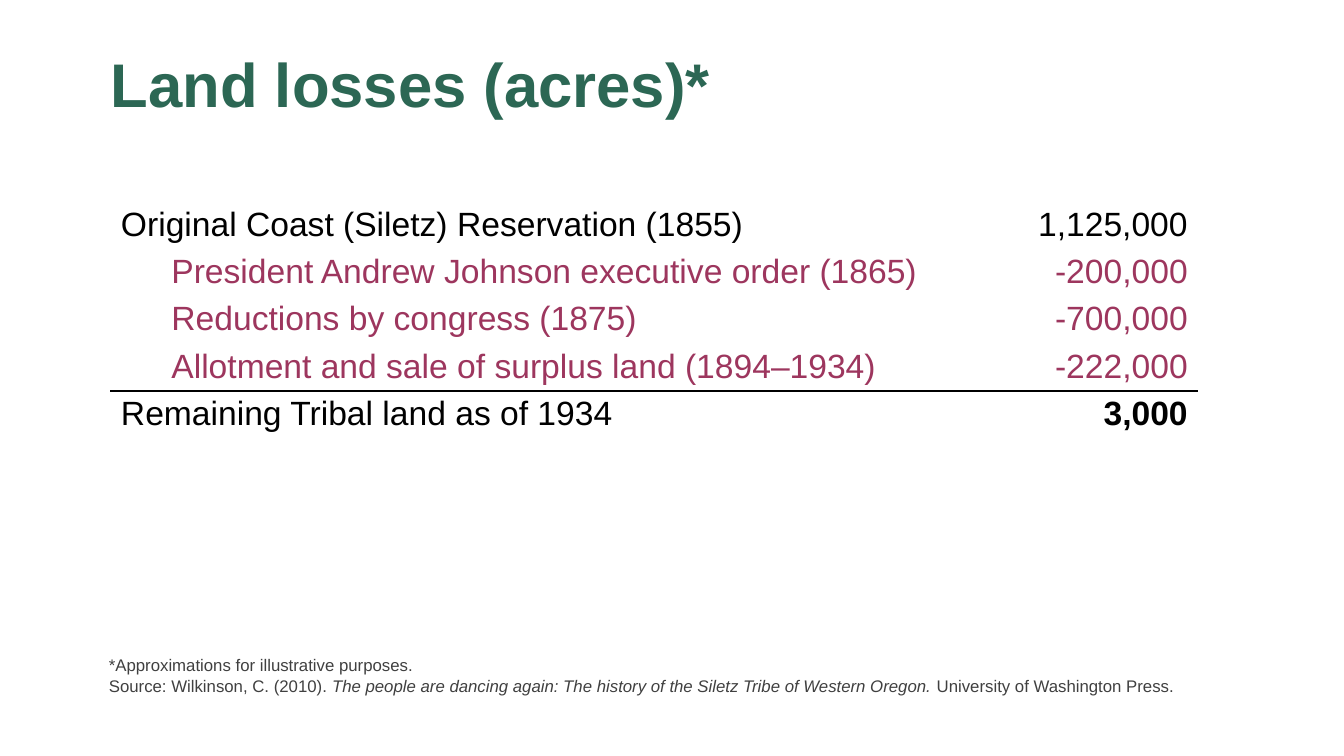
from lxml import etree
from pptx import Presentation
from pptx import util as u
from pptx.dml.color import RGBColor
from pptx.enum import text
from pptx.oxml.ns import qn

FONT = "Arial"
GREEN, ROSE, BLACK, GREY, WHITE = "2C6754", "9D365E", "000000", "404040", "FFFFFF"
TITLE = "Land losses (acres)*"
ACRES = [
    ("Original Coast (Siletz) Reservation (1855)", "1,125,000", BLACK),
    ("President Andrew Johnson executive order (1865)", "-200,000", ROSE),
    ("Reductions by congress (1875)", "-700,000", ROSE),
    ("Allotment and sale of surplus land (1894–1934)", "-222,000", ROSE),
    ("Remaining Tribal land as of 1934", "3,000", BLACK),
]
NOTES = [
    [("*Approximations for illustrative purposes.", False)],
    [
        ("Source: Wilkinson, C. (2010). ", False),
        ("The people are dancing again: The history of the Siletz Tribe of Western Oregon.\u00a0", True),
        ("University of Washington Press.", False),
    ],
]
LEFT, COLUMNS, ROW = 1.1, (8.27, 2.51), 0.47
WIDTH = sum(COLUMNS)
TOTAL = len(ACRES) - 1


def color(value):
    return RGBColor.from_string(value)


def style(span, size, value, bold=False, italic=False):
    font = span.font
    font.name, font.size, font.bold, font.italic = FONT, u.Pt(size), bold, italic
    font.color.rgb = color(value)


def add_box(page, left, top, width, height):
    frame = page.shapes.add_textbox(*map(u.Inches, (left, top, width, height))).text_frame
    frame.word_wrap = True
    frame.margin_left = frame.margin_right = frame.margin_top = frame.margin_bottom = 0
    return frame


def rule(cell, side):
    line = etree.Element(qn("a:" + side), w=str(u.Pt(1)))
    fill = etree.SubElement(line, qn("a:solidFill"))
    etree.SubElement(fill, qn("a:srgbClr"), val=BLACK)
    cell._tc.get_or_add_tcPr().insert(0, line)


def add_table(page):
    table = page.shapes.add_table(
        len(ACRES), len(COLUMNS), u.Inches(LEFT), u.Inches(2),
        u.Inches(WIDTH), u.Inches(ROW * len(ACRES))).table
    table.first_row = table.horz_banding = False
    for column, width in zip(table.columns, COLUMNS):
        column.width = u.Inches(width)
    for index, (label, amount, value) in enumerate(ACRES):
        table.rows[index].height = u.Inches(ROW)
        for place, content in enumerate((label, amount)):
            cell = table.cell(index, place)
            cell.fill.solid()
            cell.fill.fore_color.rgb = color(WHITE)
            cell.margin_top = cell.margin_bottom = u.Inches(0.04)
            indented = value == ROSE and place == 0
            cell.margin_left = u.Inches(0.6 if indented else 0.1)
            cell.text_frame.text = content
            para = cell.text_frame.paragraphs[0]
            para.alignment = text.PP_ALIGN.RIGHT if place else text.PP_ALIGN.LEFT
            style(para.runs[0], 24, value, bold=index == TOTAL and place == 1)
            if index == TOTAL - 1:
                rule(cell, "lnB")
            if index == TOTAL:
                rule(cell, "lnT")


def main():
    deck = Presentation()
    deck.slide_width, deck.slide_height = u.Inches(13.33), u.Inches(7.5)
    page = deck.slides.add_slide(deck.slide_layouts[6])
    add_table(page)

    title = add_box(page, LEFT, 0.54, WIDTH, 1.41)
    title.text = TITLE
    title.paragraphs[0].line_spacing = 0.9
    style(title.paragraphs[0].runs[0], 44, GREEN, bold=True)

    notes = add_box(page, 1.08, 6.5, 10.8, 0.74)
    for index, parts in enumerate(NOTES):
        para = notes.add_paragraph() if index else notes.paragraphs[0]
        for content, italic in parts:
            span = para.add_run()
            span.text = content
            style(span, 12, GREY, italic=italic)
    deck.save("out.pptx")


if __name__ == "__main__":
    main()
